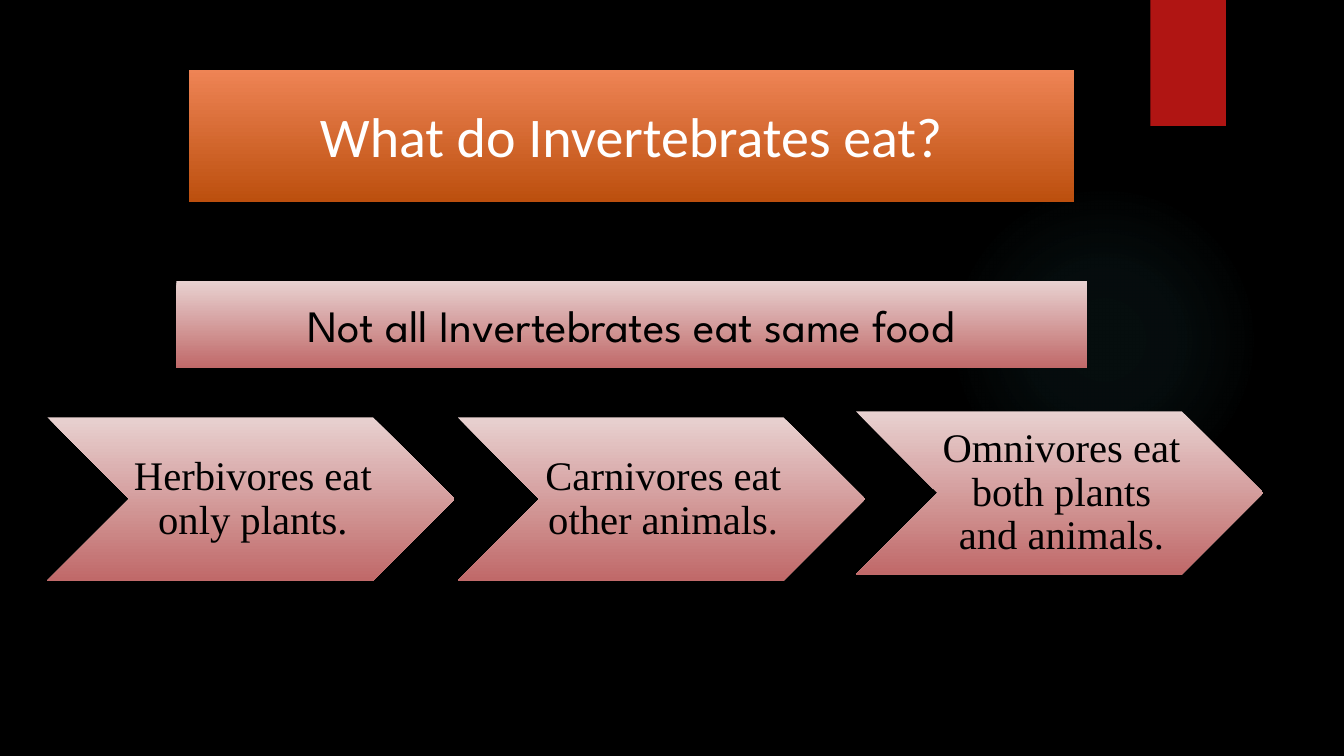
"""Build a slide on what invertebrates eat."""
from lxml import etree
from pptx import Presentation
from pptx import util as u
from pptx.dml.color import RGBColor
from pptx.enum import shapes, text
from pptx.oxml import ns

BLACK = RGBColor(0x00, 0x00, 0x00)
WHITE = RGBColor(0xFF, 0xFF, 0xFF)
RIBBON_RED = RGBColor(0xB0, 0x15, 0x13)
GLOW_TEAL = RGBColor(0x50, 0xB9, 0xC1)
ORANGES = RGBColor(0xEE, 0x84, 0x55), RGBColor(0xBC, 0x4F, 0x0E)
ROSES = RGBColor(0xE8, 0xD1, 0xD0), RGBColor(0xC0, 0x69, 0x69)

GLOW_BOX = 9.41, 1.83, 3.08, 3.08
GLOW_STOPS = [(0, 7), (36, 6), (69, 0)]
RIBBON_BOX = 11.41, 0, 0.75, 1.25
BANNERS = [
    ("What do Invertebrates eat?", (1.87, 0.69, 8.78, 1.31), ORANGES,
     {"name": "Calibri", "size": u.Pt(40)}, WHITE),
    ("Not all Invertebrates eat same food", (1.75, 2.79, 9.03, 0.86), ROSES,
     {"name": "League Spartan", "size": u.Pt(32)}, BLACK),
]
DIETS = [
    ("Herbivores eat only plants.", 0.47, 4.14),
    ("Carnivores eat other animals.", 4.54, 4.14),
    ("Omnivores eat both plants and animals.", 8.49, 4.08),
]
DIET_SIZE = 4.04, 1.62
DIET_FONT = {"name": "Times New Roman", "size": u.Pt(29)}
DIET_MARGINS = {"margin_left": u.Inches(0.04), "margin_right": 0,
                "margin_top": u.Inches(0.02), "margin_bottom": u.Inches(0.02)}


def set_all(target, values):
    for key, value in values.items():
        setattr(target, key, value)


def add_plain(slide, kind, box):
    figure = slide.shapes.add_shape(kind, *map(u.Inches, box))
    figure.shadow.inherit = False
    figure.line.fill.background()
    return figure


def add_glow(slide):
    glow = add_plain(slide, shapes.MSO_SHAPE.OVAL, GLOW_BOX)
    glow.fill.gradient()
    gradient = glow.element.spPr.find(ns.qn("a:gradFill"))
    for child in list(gradient):
        gradient.remove(child)
    stops = etree.SubElement(gradient, ns.qn("a:gsLst"))
    for position, opacity in GLOW_STOPS:
        stop = etree.SubElement(stops, ns.qn("a:gs"), pos=str(position * 1000))
        color = etree.SubElement(stop, ns.qn("a:srgbClr"), val=str(GLOW_TEAL))
        etree.SubElement(color, ns.qn("a:alpha"), val=str(opacity * 1000))
    radial = etree.SubElement(gradient, ns.qn("a:path"), {"path": "circle"})
    etree.SubElement(radial, ns.qn("a:fillToRect"),
                     dict.fromkeys("ltrb", "50000"))


def add_label(slide, kind, words, box, colors, font, ink):
    label = add_plain(slide, kind, box)
    label.fill.gradient()
    label.fill.gradient_angle = 270
    for stop, position, color in zip(label.fill.gradient_stops, (0, 1), colors):
        stop.position = position
        stop.color.rgb = color
    frame = label.text_frame
    set_all(frame, {"word_wrap": True, "vertical_anchor": text.MSO_ANCHOR.MIDDLE})
    paragraph = frame.paragraphs[0]
    paragraph.alignment = text.PP_ALIGN.CENTER
    run = paragraph.add_run()
    run.text = words
    set_all(run.font, font)
    run.font.color.rgb = ink
    return frame


def main():
    deck = Presentation()
    set_all(deck, {"slide_width": u.Inches(13.33), "slide_height": u.Inches(7.5)})
    slide = deck.slides.add_slide(deck.slide_layouts[6])
    slide.background.fill.solid()
    slide.background.fill.fore_color.rgb = BLACK

    add_glow(slide)
    ribbon = add_plain(slide, shapes.MSO_SHAPE.RECTANGLE, RIBBON_BOX)
    ribbon.fill.solid()
    ribbon.fill.fore_color.rgb = RIBBON_RED

    for words, left, top in DIETS:
        diet = add_label(slide, shapes.MSO_SHAPE.CHEVRON, words,
                         (left, top, *DIET_SIZE), ROSES, DIET_FONT, BLACK)
        set_all(diet, DIET_MARGINS)
        diet.paragraphs[0].line_spacing = 0.9
    for banner in BANNERS:
        add_label(slide, shapes.MSO_SHAPE.RECTANGLE, *banner)

    deck.save("out.pptx")


if __name__ == "__main__":
    main()
